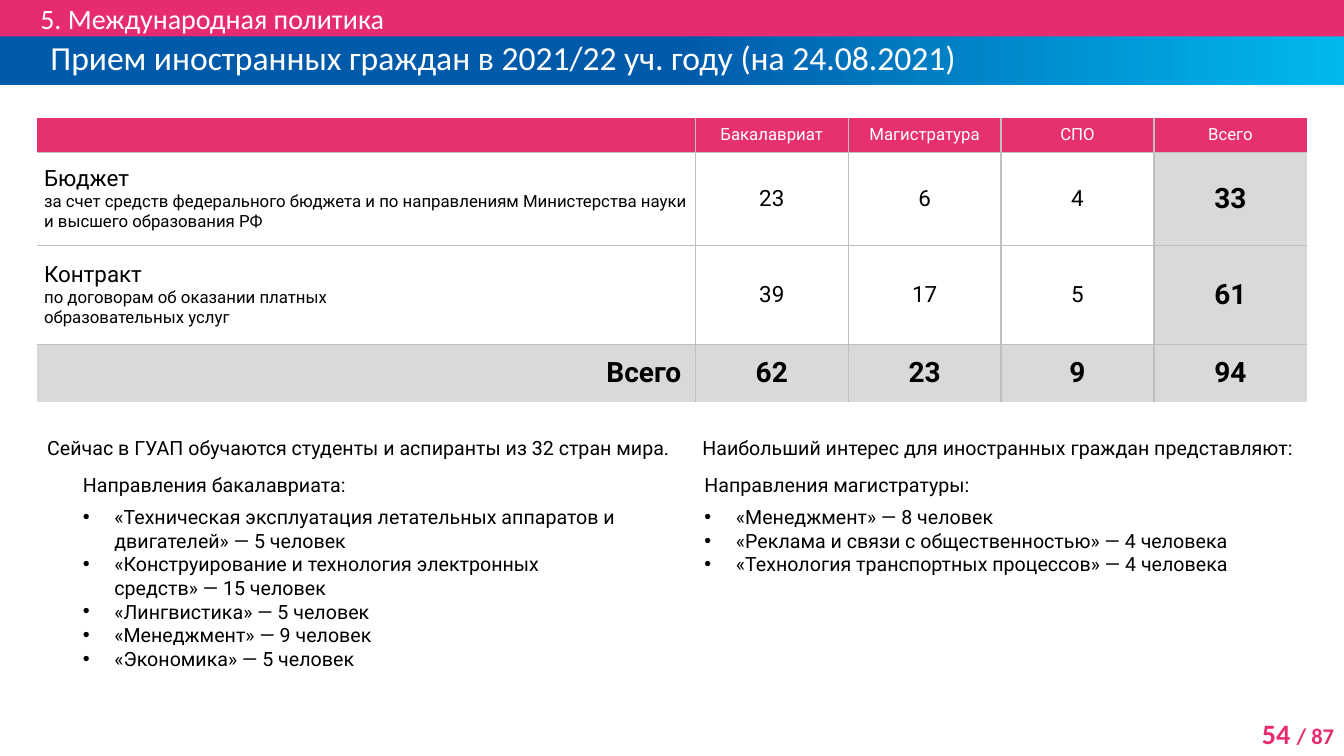
from copy import deepcopy
from dataclasses import dataclass

from lxml import etree
from pptx import Presentation
from pptx.dml.color import RGBColor
from pptx.enum.text import MSO_ANCHOR, MSO_AUTO_SIZE, PP_ALIGN
from pptx.oxml.ns import qn
from pptx.util import Pt

LEFT, MID, RIGHT = PP_ALIGN.LEFT, PP_ALIGN.CENTER, PP_ALIGN.RIGHT
TOP, HALF = MSO_ANCHOR.TOP, MSO_ANCHOR.MIDDLE
FIXED = MSO_AUTO_SIZE.NONE
SIDES = ("left", "top", "right", "bottom")


# Colours and type: each style is font, size, colour, bold
@dataclass(frozen=True)
class Theme:
    pink: str = "E72B70"
    head: str = "E73070"
    blue: str = "005AAA"
    sky: str = "00B8EE"
    grey: str = "D9D9D9"
    rule: str = "BFBFBF"
    white: str = "FFFFFF"
    black: str = "000000"

    def font(self, style):
        name, size, tint, bold = {
            "part": ("Calibri", 20, self.white, False),
            "title": ("Calibri", 24, self.white, False),
            "page": ("Calibri", 20, self.pink, True),
            "pages": ("Calibri", 16, self.pink, True),
            "head": ("Roboto", 12, self.white, False),
            "large": ("Roboto", 16, self.black, False),
            "small": ("Roboto", 12, self.black, False),
            "total": ("Roboto", 20, self.black, True),
            "text": ("Roboto", 14, self.black, False),
        }[style]
        return {"name": name, "size": Pt(size), "bold": bold}, tint


def apply(item, values):
    for key, value in values.items():
        setattr(item, key, value)


def add(parent, tag, **attrs):
    return etree.SubElement(parent, qn(tag), attrs)


class Deck:
    def __init__(self, theme):
        self.theme = theme
        self.file = Presentation()
        apply(self.file, {"slide_width": Pt(960), "slide_height": Pt(540)})
        self.slide = self.file.slides.add_slide(self.file.slide_layouts[4])
        self.slots = {s.placeholder_format.idx: s for s in self.slide.placeholders}

    def para(self, para, runs, align=LEFT, after=0, left=0, hang=0,
             bullet=False, tab=None, lead=1.0):
        props = para._p.get_or_add_pPr()
        props.set("marL", str(Pt(left)))
        props.set("indent", str(-Pt(hang)))
        if bullet:
            add(props, "a:buFont", typeface="Arial")
            add(props, "a:buChar", char="•")
        else:
            add(props, "a:buNone")
        if tab:
            add(add(props, "a:tabLst"), "a:tab", pos=str(Pt(tab)), algn="l")
        apply(para, {"alignment": align, "space_before": Pt(0),
                     "space_after": Pt(after), "line_spacing": lead})
        for words, style in runs:
            run = para.add_run()
            run.text = words
            values, tint = self.theme.font(style)
            apply(run.font, values)
            run.font.color.rgb = RGBColor.from_string(tint)

    def text(self, box, frame, paras, inset, anchor):
        apply(box, {f"margin_{s}": Pt(v) for s, v in zip(SIDES, inset)})
        box.vertical_anchor = anchor
        for i, (runs, look) in enumerate(paras):
            self.para(frame.add_paragraph() if i else frame.paragraphs[0], runs, **look)

    def block(self, shape, spot, paras, inset=(7.2, 3.6, 7.2, 3.6), anchor=TOP):
        apply(shape, dict(zip(("left", "top", "width", "height"), map(Pt, spot))))
        frame = shape.text_frame
        apply(frame, {"word_wrap": True, "auto_size": FIXED})
        self.text(frame, frame, paras, inset, anchor)

    def list(self, slot, spot, head, items):
        paras = [([(head, "text")], {"after": 6})]
        paras += [([(item, "text")], {"left": 22.5, "hang": 22.5, "bullet": True})
                  for item in items]
        self.block(self.slots[slot], spot, paras)

    def label(self, spot, runs, align):
        box = self.slide.shapes.add_textbox(0, 0, 0, 0)
        self.block(box, spot, [(runs, {"align": align})])

    def paint(self, shape, tint):
        shape.fill.solid()
        shape.fill.fore_color.rgb = RGBColor.from_string(tint)

    def fade(self, shape, tints):
        shape.fill.gradient()
        shape.fill.gradient_angle = 0
        stops = shape.element.find(".//" + qn("a:gsLst"))
        stops.insert(1, deepcopy(stops[0]))
        for i, (stop, tint) in enumerate(zip(shape.fill.gradient_stops, tints)):
            stop.position = i / 2
            stop.color.rgb = RGBColor.from_string(tint)

    def edges(self, cell, shown):
        props = cell._tc.get_or_add_tcPr()
        for side, show in shown.items():
            line = add(props, f"a:ln{side}", w=str(Pt(1)))
            if show:
                add(add(line, "a:solidFill"), "a:srgbClr", val=self.theme.rule)
            else:
                add(line, "a:noFill")

    def table(self, spot, cols, rows, data):
        grid = self.slide.shapes.add_table(len(rows), len(cols), *map(Pt, spot)).table
        apply(grid, {"first_row": False, "horz_banding": False})
        for col, wide in zip(grid.columns, cols):
            col.width = Pt(wide)
        for row, high in zip(grid.rows, rows):
            row.height = Pt(high)
        end, foot = len(cols) - 1, len(rows) - 1
        for r, line in enumerate(data):
            for c, words in enumerate(line):
                cell = grid.cell(r, c)
                self.edges(cell, {"L": c > 0, "R": c < end, "T": r > 0, "B": r < foot})
                total = r == foot or c == end
                if r == 0:
                    self.paint(cell, self.theme.head)
                elif total:
                    self.paint(cell, self.theme.grey)
                else:
                    cell.fill.background()
                style = "head" if r == 0 else "total" if total else "large"
                align = MID if c else RIGHT if r == foot else LEFT
                first, *more = words.split("\n")
                lines = [(first, style)] + [(part, "small") for part in more]
                self.text(cell, cell.text_frame,
                          [([part], {"align": align}) for part in lines],
                          (5, 0, 10 if align == RIGHT else 5, 0), HALF)


def main():
    theme = Theme()
    deck = Deck(theme)

    # Section and title bars
    part, title = deck.slots[1], deck.slots[0]
    deck.block(part, (0, 0, 960, 26),
               [([("5. Международная политика", "part")], {"left": 28.8})],
               (0, 0, 0, 0), HALF)
    deck.paint(part, theme.pink)
    deck.block(title, (0, 26, 960, 34.5),
               [([("Прием иностранных граждан в 2021/22 уч. году (на 24.08.2021)", "title")],
                 {"left": 28.8, "lead": Pt(24)})], (7.2, 0, 7.2, 0), HALF)
    deck.fade(title, (theme.blue, theme.blue, theme.sky))

    # Admission table
    deck.table((26.5, 84.3, 907, 203), [470.2] + [109.2] * 4, [24.5, 66.5, 70.7, 41.3], [
        ["", "Бакалавриат", "Магистратура", "СПО", "Всего"],
        ["Бюджет\nза счет средств федерального бюджета и по направлениям "
         "Министерства науки и высшего образования РФ", "23", "6", "4", "33"],
        ["Контракт\nпо договорам об оказании платных\nобразовательных услуг",
         "39", "17", "5", "61"],
        ["Всего", "62", "23", "9", "94"],
    ])

    # Lead line and lists
    deck.block(deck.slots[3], (26.5, 308, 916, 24.5), [
        ([("Сейчас в ГУАП обучаются студенты и аспиранты из 32 стран мира.\t"
           "Наибольший интерес для иностранных граждан представляют:", "text")],
         {"tab": 462})])
    deck.list(2, (52, 334.5, 403, 149), "Направления бакалавриата:", [
        "«Техническая эксплуатация летательных аппаратов и двигателей» — 5 человек",
        "«Конструирование и технология электронных средств» — 15 человек",
        "«Лингвистика» — 5 человек",
        "«Менеджмент» — 9 человек",
        "«Экономика» — 5 человек",
    ])
    deck.list(4, (496, 334.5, 428.5, 81.5), "Направления магистратуры:", [
        "«Менеджмент» — 8 человек",
        "«Реклама и связи с общественностью» — 4 человека",
        "«Технология транспортных процессов» — 4 человека",
    ])

    # Page number
    deck.label((873.5, 508.3, 86.5, 31.7), [("54 ", "page"), ("/ 87", "pages")], RIGHT)
    deck.file.save("out.pptx")


if __name__ == "__main__":
    main()
